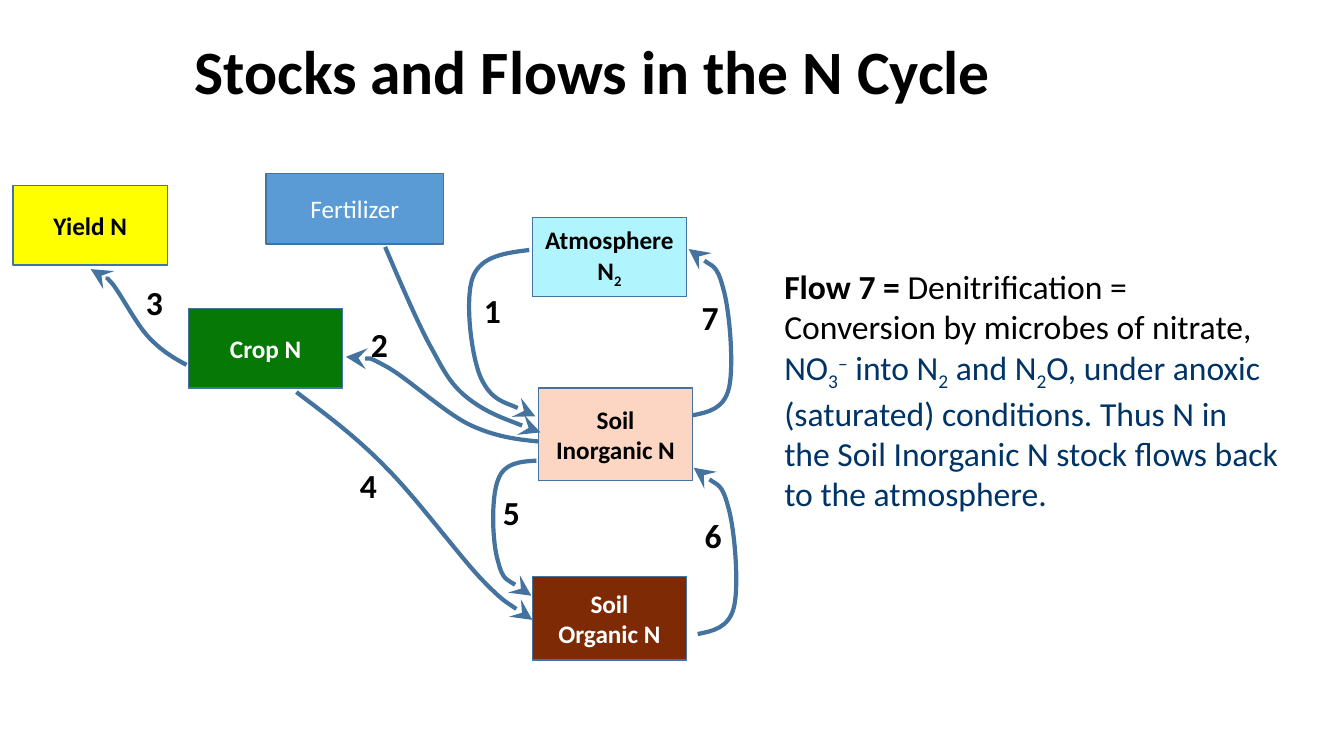
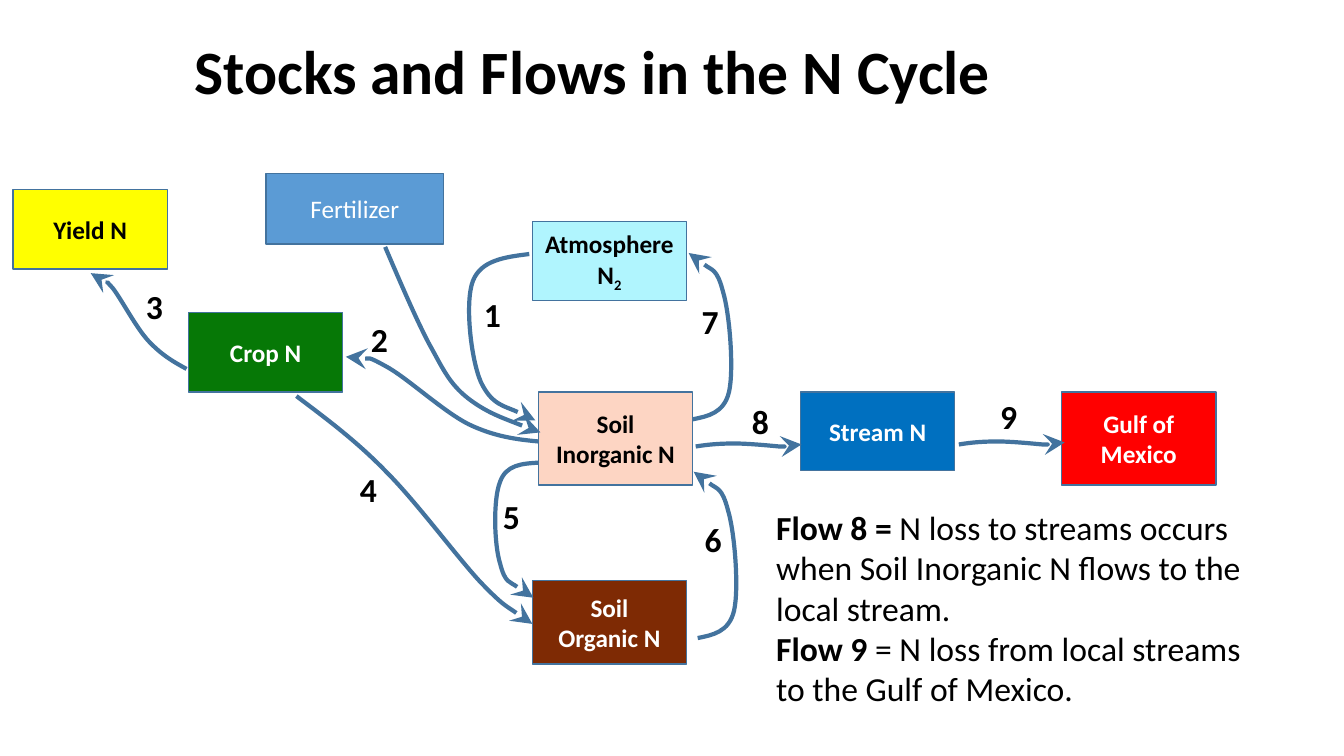
import lxml.etree
import pptx
import pptx.dml.color
import pptx.enum.shapes
import pptx.enum.text
import pptx.oxml.ns
import pptx.util

Inches = pptx.util.Inches
Pt = pptx.util.Pt
RGBColor = pptx.dml.color.RGBColor
ANCHOR = pptx.enum.text.MSO_ANCHOR
ALIGN = pptx.enum.text.PP_ALIGN
qn = pptx.oxml.ns.qn

FONT = "Calibri"
BLACK = RGBColor(0x00, 0x00, 0x00)
WHITE = RGBColor(0xFF, 0xFF, 0xFF)
NAVY = RGBColor(0x00, 0x33, 0x66)
OUTLINE = RGBColor(0x43, 0x73, 0x9E)
AIR = RGBColor(0xB0, 0xF5, 0xFE)
INORGANIC = RGBColor(0xFD, 0xD5, 0xC3)
ORGANIC = RGBColor(0x7E, 0x2A, 0x04)
CROP = RGBColor(0x06, 0x78, 0x06)
YIELD = RGBColor(0xFF, 0xFF, 0x00)
FERTILIZER = RGBColor(0x5B, 0x9B, 0xD5)
STREAM = RGBColor(0x00, 0x70, 0xC0)
GULF = RGBColor(0xFF, 0x00, 0x00)

STOCK_WIDTH = 1.53
SUB, SUPER = -25000, 30000

FIXATION = [(5.25, 0.68), (5.01, 0.71), (4.77, 0.74), (4.69, 0.95), (4.61, 1.16),
            (4.67, 1.72), (4.77, 1.95), (4.88, 2.18), (5.22, 2.27), (5.31, 2.33)]
RETURN_LOOP = [(6.87, 2.32), (7.02, 2.29), (7.18, 2.26), (7.23, 2.05), (7.28, 1.84),
               (7.24, 1.28), (7.17, 1.05), (7.11, 0.82), (6.89, 0.73), (6.83, 0.67)]
HARVEST = [(1.85, 1.82), (1.72, 1.75), (1.6, 1.68), (1.47, 1.54), (1.35, 1.41),
           (1.21, 1.14), (1.12, 1.02), (1.02, 0.91), (0.9, 0.87), (0.9, 0.87)]
RESIDUE = [(2.94, 2.09), (3.23, 2.31), (3.53, 2.53), (3.83, 2.84), (4.13, 3.14),
           (4.52, 3.67), (4.76, 3.93), (5, 4.18), (5.28, 4.35), (5.28, 4.35)]
IMMOBILIZATION = [(0.44, 0.01), (0.28, 0.02), (0.12, 0.03), (0.06, 0.2), (-0.01, 0.37),
                  (0, 0.82), (0.06, 1.01), (0.11, 1.21), (0.33, 1.3), (0.39, 1.35)]
APPLICATION = [(1.22, 0.75), (1.37, 1.1), (1.52, 1.45), (1.65, 1.7), (1.79, 1.95),
               (1.85, 2.1), (2.04, 2.25), (2.22, 2.39), (2.49, 2.49), (2.76, 2.59)]
UPTAKE = [(2.74, 2.68), (2.52, 2.66), (2.3, 2.63), (2.05, 2.51), (1.79, 2.38),
          (1.43, 2.04), (1.22, 1.93), (1.02, 1.82), (0.83, 1.84), (0.83, 1.84)]
RUNOFF = [(0, 0.55), (0.12, 0.53), (0.24, 0.52), (0.38, 0.52), (0.52, 0.52),
          (0.72, 0.54), (0.83, 0.55), (0.94, 0.55), (1.05, 0.53), (1.05, 0.53)]


def write(frame, paragraphs, size, align=None):
    """Fill a frame with paragraphs of (text, colour, bold, baseline) runs."""
    for index, pieces in enumerate(paragraphs):
        paragraph = frame.add_paragraph() if index else frame.paragraphs[0]
        paragraph.alignment = align
        for text, color, bold, baseline in pieces:
            run = paragraph.add_run()
            run.text = text
            run.font.name = FONT
            run.font.size = Pt(size)
            run.font.bold = bold
            run.font.color.rgb = color
            if baseline:
                run._r.get_or_add_rPr().set("baseline", str(baseline))


def add_stock(slide, left, top, height, fill, lines, color=WHITE, width=STOCK_WIDTH, bold=True):
    """Draw a stock as an outlined box holding centred lines of (text, baseline) pieces."""
    stock = slide.shapes.add_shape(pptx.enum.shapes.MSO_SHAPE.RECTANGLE, Inches(left),
                                   Inches(top), Inches(width), Inches(height))
    stock.shadow.inherit = False
    stock.fill.solid()
    stock.fill.fore_color.rgb = fill
    stock.line.color.rgb = OUTLINE
    stock.line.width = Pt(1)
    stock.text_frame.word_wrap = True
    stock.text_frame.vertical_anchor = ANCHOR.MIDDLE
    paragraphs = [[(text, color, bold, baseline) for text, baseline in line] for line in lines]
    write(stock.text_frame, paragraphs, 18, ALIGN.CENTER)


def add_flow(slide, left, top, points):
    """Draw a chain of cubic curves ending in an arrowhead."""
    (start_x, start_y), *rest = [(Inches(left + x), Inches(top + y)) for x, y in points]
    builder = slide.shapes.build_freeform(start_x, start_y)
    builder.add_line_segments(rest, close=False)
    flow = builder.convert_to_shape()
    flow.shadow.inherit = False
    flow.fill.background()
    flow.line.color.rgb = OUTLINE
    flow.line.width = Pt(3)
    outline = next(flow._element.iter(qn("a:path")))
    segments = outline.findall(qn("a:lnTo"))
    for first in range(0, len(segments), 3):
        curve = lxml.etree.SubElement(outline, qn("a:cubicBezTo"))
        for segment in segments[first:first + 3]:
            curve.append(segment[0])
            outline.remove(segment)
    lxml.etree.SubElement(flow.line._get_or_add_ln(), qn("a:tailEnd"),
                          type="stealth", w="lg", len="lg")


def add_number(slide, left, top, number):
    """Place the bold number of a flow."""
    box = slide.shapes.add_textbox(Inches(left), Inches(top), Inches(0.37), Inches(0.5))
    box.text_frame.word_wrap = False
    write(box.text_frame, [[(number, BLACK, True, 0)]], 24)


def add_title(slide, left, top):
    """Place the centred slide title."""
    box = slide.shapes.add_textbox(Inches(left), Inches(top), Inches(11.5), Inches(1.45))
    box.text_frame.word_wrap = True
    box.text_frame.vertical_anchor = ANCHOR.MIDDLE
    write(box.text_frame, [[("Stocks and Flows in the N Cycle", BLACK, True, 0)]], 44, ALIGN.CENTER)
    box.text_frame.paragraphs[0].line_spacing = 0.9


def add_explanation(slide, left, top, height, paragraphs):
    """Place the text that explains the flows."""
    box = slide.shapes.add_textbox(Inches(left), Inches(top), Inches(5.11), Inches(height))
    box.text_frame.word_wrap = True
    write(box.text_frame, paragraphs, 24)


def add_cycle(slide, left, top):
    """Draw the soil, crop and air stocks with the flows between them."""
    stocks = [
        (5.28, 0.36, 0.78, AIR, [[("Atmosphere", 0)], [("N", 0), ("2", SUB)]], BLACK),
        (5.34, 2.05, 0.92, INORGANIC, [[("Soil Inorganic N", 0)]], BLACK),
        (1.87, 1.26, 0.79, CROP, [[("Crop N", 0)]], WHITE),
        (0.13, 0.04, 0.79, YIELD, [[("Yield N", 0)]], BLACK),
        (5.28, 3.92, 0.83, ORGANIC, [[("Soil", 0)], [("Organic N", 0)]], WHITE),
    ]
    for x, y, height, fill, lines, color in stocks:
        add_stock(slide, left + x, top + y, height, fill, lines, color)
    for points in (FIXATION, RETURN_LOOP, HARVEST, RESIDUE):
        add_flow(slide, left, top, points)
    add_flow(slide, left + 0.05, top + 2.17, RETURN_LOOP)
    numbers = [("1", 4.7, 1.03), ("3", 1.35, 0.95), ("4", 3.47, 2.76),
               ("5", 4.89, 3.03), ("6", 6.89, 3.26), ("7", 6.86, 1.1)]
    for number, x, y in numbers:
        add_number(slide, left + x, top + y, number)


def add_supply(slide, left, top, uptake_number_top):
    """Draw the fertilizer stock, its flow and the crop uptake."""
    add_stock(slide, left + 0.04, top + 0.02, 0.7, FERTILIZER, [[("Fertilizer", 0)]],
              width=1.76, bold=False)
    for points in (UPTAKE, APPLICATION):
        add_flow(slide, left, top, points)
    add_number(slide, left + 0.98, top + uptake_number_top, "2")


def add_water_losses(slide, left, top):
    """Draw the flows to the stream and on to the gulf."""
    add_stock(slide, left + 1.04, top + 0.01, 0.78, STREAM, [[("Stream N", 0)]])
    add_stock(slide, left + 3.63, top + 0.01, 0.92, GULF, [[("Gulf of Mexico", 0)]])
    add_flow(slide, left, top, RUNOFF)
    add_flow(slide, left + 2.61, top - 0.02, RUNOFF)
    add_number(slide, left + 0.46, top + 0.05, "8")
    add_number(slide, left + 2.92, top, "9")


def add_cycle_slide(deck, cycle_top, immobilization_at, uptake_number_top):
    """Add a slide with the title and the whole cycle."""
    slide = deck.slides.add_slide(deck.slide_layouts[6])
    add_title(slide, 0.13, 0.01)
    add_cycle(slide, 0, cycle_top)
    add_flow(slide, *immobilization_at, IMMOBILIZATION)
    add_supply(slide, 2.6, 1.7, uptake_number_top)
    return slide


def main():
    """Build and save the deck."""
    deck = pptx.Presentation()
    deck.slide_width = Inches(13.33)
    deck.slide_height = Inches(7.5)

    denitrification = add_cycle_slide(deck, 1.8, (4.88, 4.56), 1.46)
    add_explanation(denitrification, 7.68, 2.59, 2.52, [[
        ("Flow 7 = ", BLACK, True, 0),
        ("Denitrification = Conversion by microbes of nitrate, ", BLACK, False, 0),
        ("NO", NAVY, False, 0),
        ("3", NAVY, False, SUB),
        ("–", NAVY, False, SUPER),
        (" into N", NAVY, False, 0),
        ("2", NAVY, False, SUB),
        (" and N", NAVY, False, 0),
        ("2", NAVY, False, SUB),
        ("O, under anoxic (saturated) conditions. Thus N in the Soil Inorganic N stock "
         "flows back to the atmosphere.", NAVY, False, 0),
    ]])

    losses = add_cycle_slide(deck, 1.84, (4.9, 4.58), 1.41)
    add_water_losses(losses, 6.9, 3.88)
    add_explanation(losses, 7.6, 4.98, 2.12, [
        [("Flow 8 = ", BLACK, True, 0),
         ("N loss to streams occurs when Soil Inorganic N flows to the local stream.",
          BLACK, False, 0)],
        [("Flow 9", BLACK, True, 0),
         (" = N loss from local streams to the Gulf of Mexico.", BLACK, False, 0)],
    ])
    deck.save("out.pptx")


if __name__ == "__main__":
    main()
